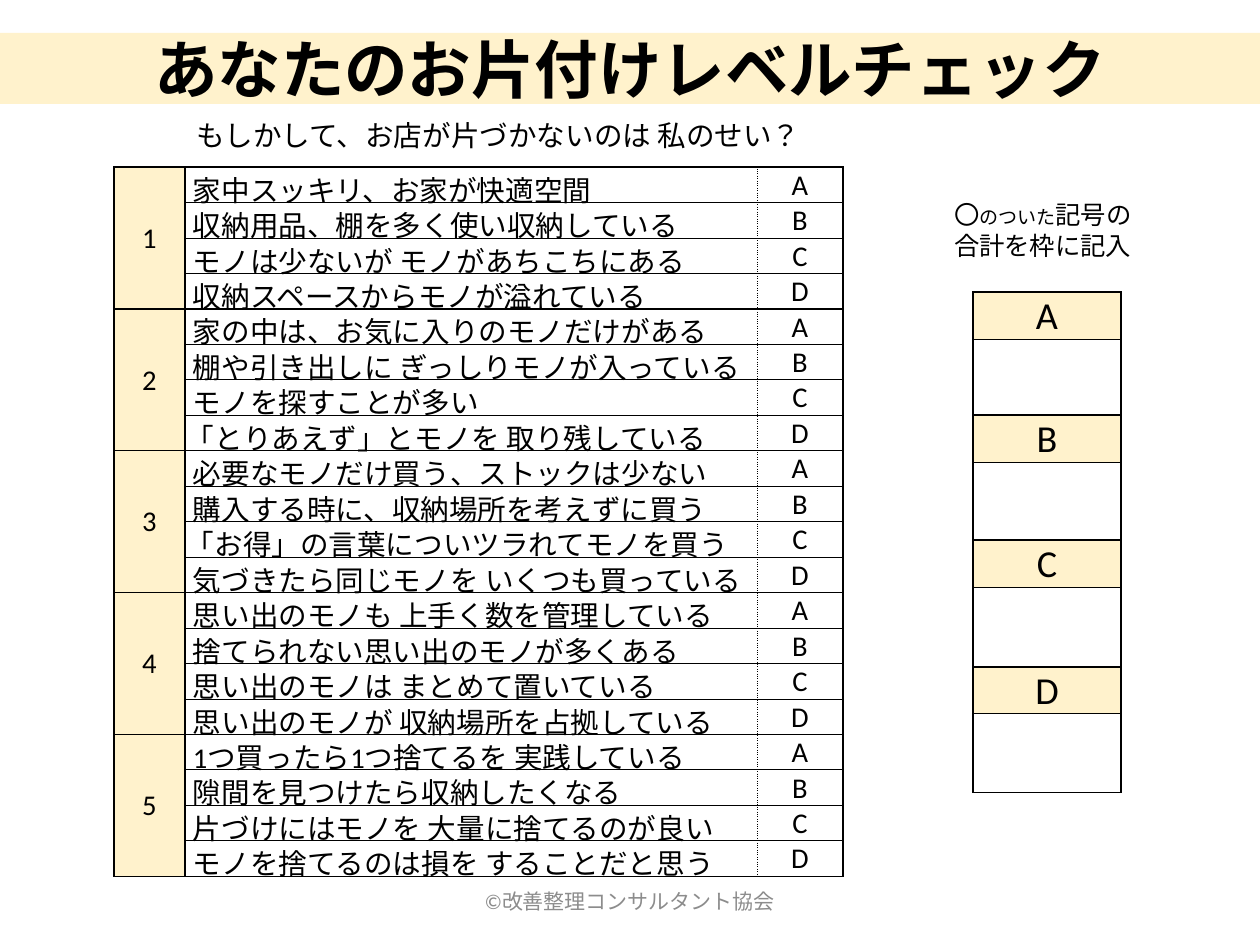
from dataclasses import dataclass

from lxml import etree
from pptx import Presentation
from pptx import util as u
from pptx.dml.color import RGBColor
from pptx.enum import lang, text
from pptx.oxml import ns

PX = 8000  # EMU per px


@dataclass(frozen=True)
class Theme:
    font: str = "Calibri"
    ink: str = "000000"
    cream: str = "FFF2CC"
    muted: str = "8C8C8C"
    title: float = 40
    total: float = 24
    body: float = 18
    note: float = 16
    small: float = 12
    credit: float = 13.2


THEME = Theme()
THICK, THIN, DOTTED = (1, "solid"), (0.5, "solid"), (0.5, "sysDot")
LEVELS = "ABCD"
MIDDLE = text.MSO_ANCHOR.MIDDLE
CENTER = text.PP_ALIGN.CENTER

QUESTIONS = [
    ["家中スッキリ、お家が快適空間",
     "収納用品、棚を多く使い収納している",
     "モノは少ないが モノがあちこちにある",
     "収納スペースからモノが溢れている"],
    ["家の中は、お気に入りのモノだけがある",
     "棚や引き出しに ぎっしりモノが入っている",
     "モノを探すことが多い",
     "「とりあえず」とモノを 取り残している"],
    ["必要なモノだけ買う、ストックは少ない",
     "購入する時に、収納場所を考えずに買う",
     "「お得」の言葉についツラれてモノを買う",
     "気づきたら同じモノを いくつも買っている"],
    ["思い出のモノも 上手く数を管理している",
     "捨てられない思い出のモノが多くある",
     "思い出のモノは まとめて置いている",
     "思い出のモノが 収納場所を占拠している"],
    ["1つ買ったら1つ捨てるを 実践している",
     "隙間を見つけたら収納したくなる",
     "片づけにはモノを 大量に捨てるのが良い",
     "モノを捨てるのは損を することだと思う"],
]


def px(*lengths):
    return [u.Emu(length * PX) for length in lengths]


def set_all(target, values):
    for name, value in values.items():
        setattr(target, name, value)


def paint(target, color):
    target.fill.solid()
    target.fill.fore_color.rgb = RGBColor.from_string(color)


def add_span(para, words, size, color=THEME.ink, bold=False):
    span = para.add_run()
    span.text = words
    set_all(span.font, {"name": THEME.font, "size": u.Pt(size), "bold": bold,
                        "language_id": lang.MSO_LANGUAGE_ID.JAPANESE})
    span.font.color.rgb = RGBColor.from_string(color)


def add_title(page, words):
    title = page.shapes.title
    set_all(title, dict(zip(("left", "top", "width", "height"),
                            px(0, 33, 1260, 71))))
    paint(title, THEME.cream)
    set_all(title.text_frame, {"vertical_anchor": MIDDLE,
                               "auto_size": text.MSO_AUTO_SIZE.NONE})
    para = title.text_frame.paragraphs[0]
    para.alignment = CENTER
    add_span(para, words, THEME.title, bold=True)


def add_text(page, area, lines, align=None, color=THEME.ink, **frame_format):
    """Each line is a list of (words, size) spans."""
    frame = page.shapes.add_textbox(*px(*area)).text_frame
    set_all(frame, {"word_wrap": True, **frame_format})
    for index, line in enumerate(lines):
        para = frame.add_paragraph() if index else frame.paragraphs[0]
        para.alignment = align
        for words, size in line:
            add_span(para, words, size, color)


def set_borders(cell, left, right, top, bottom):
    props = cell._tc.get_or_add_tcPr()
    sides = zip(("lnL", "lnR", "lnT", "lnB"), (left, right, top, bottom))
    for index, (tag, (width, dash)) in enumerate(sides):
        line = etree.Element(ns.qn(f"a:{tag}"), w=str(u.Pt(width)))
        fill = etree.SubElement(line, ns.qn("a:solidFill"))
        etree.SubElement(fill, ns.qn("a:srgbClr"), val=THEME.ink)
        etree.SubElement(line, ns.qn("a:prstDash"), val=dash)
        props.insert(index, line)


def add_grid(page, area, row_count, widths):
    grid = page.shapes.add_table(row_count, len(widths), *px(*area)).table
    set_all(grid, {"first_row": False, "horz_banding": False})
    for column, width in zip(grid.columns, px(*widths)):
        column.width = width
    return grid


def fill_cell(cell, borders, words="", size=THEME.body, align=CENTER,
              color=None, indent=1):
    if color:
        paint(cell, color)
    else:
        cell.fill.background()
    set_borders(cell, *borders)
    if words:
        left, edge = px(indent, 1)
        set_all(cell, {"vertical_anchor": MIDDLE, "margin_left": left,
                       "margin_right": edge, "margin_top": edge,
                       "margin_bottom": 0})
        para = cell.text_frame.paragraphs[0]
        para.alignment = align
        add_span(para, words, size)


def add_checklist(page):
    size = len(LEVELS)
    row_count = size * len(QUESTIONS)
    height = 710
    grid = add_grid(page, (114, 167, 729, height), row_count, (71, 572, 86))
    for row in grid.rows:
        row.height = u.Emu(height * PX // row_count)
    for group, answers in enumerate(QUESTIONS):
        start = group * size
        grid.cell(start, 0).merge(grid.cell(start + size - 1, 0))
        for step, (answer, level) in enumerate(zip(answers, LEVELS)):
            row = start + step
            top = THIN if step else THICK
            bottom = THICK if step == size - 1 else THIN
            fill_cell(grid.cell(row, 0), [THICK] * 4,
                      "" if step else str(group + 1), color=THEME.cream)
            fill_cell(grid.cell(row, 1), (THICK, DOTTED, top, bottom), answer,
                      align=text.PP_ALIGN.LEFT,
                      indent=1 if answer.startswith("「") else 8)
            fill_cell(grid.cell(row, 2), (DOTTED, THICK, top, bottom), level)


def add_totals(page):
    label_height, blank_heights = 47, (76, 78, 80, 79)
    height = label_height * len(LEVELS) + sum(blank_heights)
    grid = add_grid(page, (973, 292, 148, height), 2 * len(LEVELS), (148,))
    for index, (level, blank) in enumerate(zip(LEVELS, blank_heights)):
        row = 2 * index
        grid.rows[row].height, grid.rows[row + 1].height = px(label_height, blank)
        fill_cell(grid.cell(row, 0), (THICK, THICK, THICK, THIN), level,
                  THEME.total, color=THEME.cream)
        fill_cell(grid.cell(row + 1, 0), (THICK, THICK, THIN, THICK))


def main():
    deck = Presentation()
    deck.slide_width, deck.slide_height = px(1260, 945)
    page = deck.slides.add_slide(deck.slide_layouts.get_by_name("Title Only"))
    grow = text.MSO_AUTO_SIZE.SHAPE_TO_FIT_TEXT

    add_text(page, (417, 876, 425, 50),
             [[("©改善整理コンサルタント協会", THEME.credit)]],
             CENTER, THEME.muted, vertical_anchor=MIDDLE)
    add_title(page, "あなたのお片付けレベルチェック")
    add_text(page, (185, 112, 634, 46),
             [[("もしかして、お店が片づかないのは 私のせい？", THEME.body)]],
             auto_size=grow)
    add_text(page, (917, 194, 283, 73),
             [[("〇", THEME.note), ("のついた", THEME.small),
               ("記号の", THEME.note)],
              [("合計を枠に記入", THEME.note)]],
             auto_size=grow, margin_left=px(37)[0])
    add_checklist(page)
    add_totals(page)
    deck.save("out.pptx")


if __name__ == "__main__":
    main()
